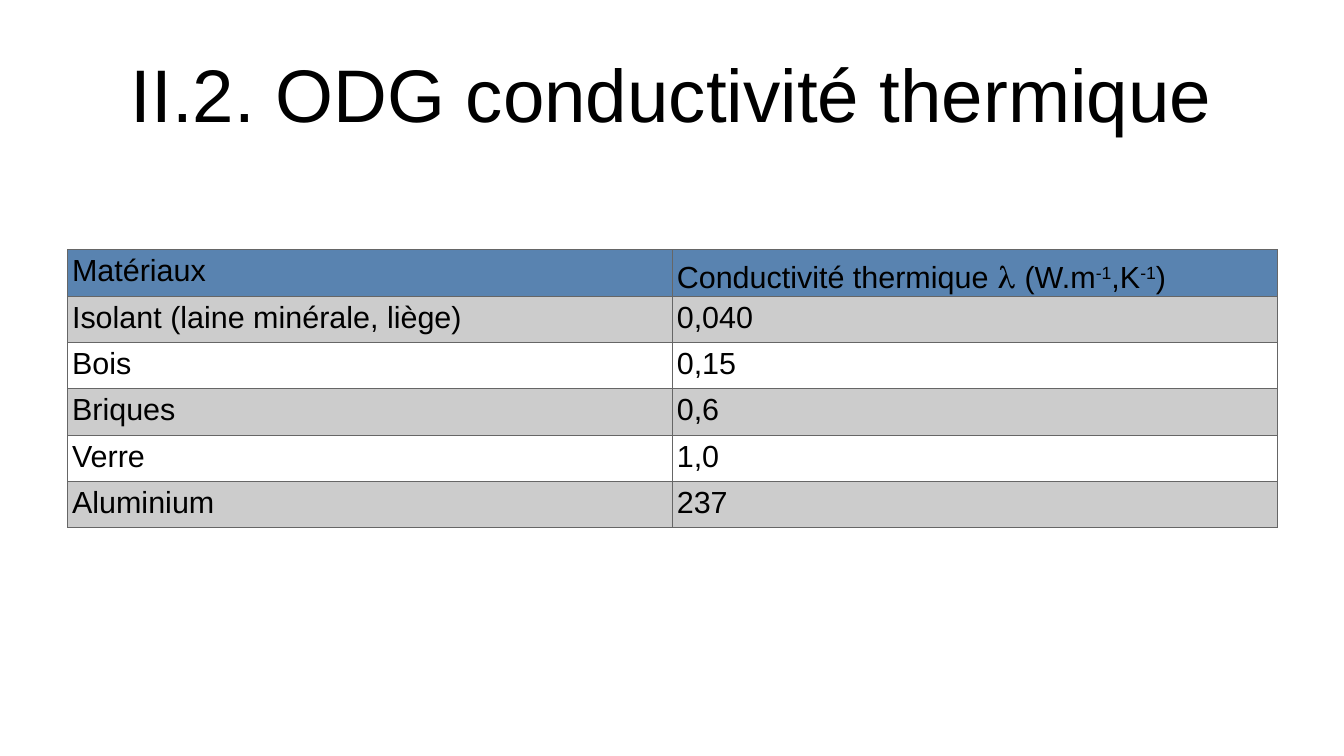
import pptx
import pptx.dml.color
import pptx.enum.text
import pptx.oxml
import pptx.oxml.ns
import pptx.util

SLIDE_WIDTH, SLIDE_HEIGHT = 11.02, 6.2
MARGIN = 0.05 * SLIDE_WIDTH
CONTENT_WIDTH = SLIDE_WIDTH - 2 * MARGIN
ROW_HEIGHT = 0.38
CELL_INSET = 0.04

HEADER_FILL, BAND_FILL, PLAIN_FILL = "5983B0", "CCCCCC", "FFFFFF"
BORDER_COLOR, BORDER_WIDTH = "666666", 0.28

UNIT_HEADER = [
    ("Conductivité thermique ", {}),
    ("λ", {"font": "TeX Gyre Schola"}),
    (" (W.m", {}),
    ("-1", {"superscript": True}),
    (",K", {}),
    ("-1", {"superscript": True}),
    (")", {}),
]
MATERIAL_ROWS = [
    ("Matériaux", UNIT_HEADER),
    ("Isolant (laine minérale, liège)", "0,040"),
    ("Bois", "0,15"),
    ("Briques", "0,6"),
    ("Verre", "1,0"),
    ("Aluminium", "237"),
]


def color(hex_string):
    return pptx.dml.color.RGBColor.from_string(hex_string)


def add_text(paragraph, text, size=18, font="Arial", fill="000000", superscript=False):
    run = paragraph.add_run()
    run.text = text
    run.font.size = pptx.util.Pt(size)
    run.font.name = font
    run.font.color.rgb = color(fill)
    if superscript:
        run._r.get_or_add_rPr().set("baseline", "30000")


def set_insets(target, inset):
    length = pptx.util.Inches(inset)
    target.margin_left = target.margin_right = length
    target.margin_top = target.margin_bottom = length


def set_borders(cell):
    properties = cell._tc.get_or_add_tcPr()
    width = pptx.util.Pt(BORDER_WIDTH)
    for position, side in enumerate(("lnL", "lnR", "lnT", "lnB")):
        line = pptx.oxml.parse_xml(
            f'<a:{side} {pptx.oxml.ns.nsdecls("a")} w="{width}"><a:solidFill>'
            f'<a:srgbClr val="{BORDER_COLOR}"/></a:solidFill></a:{side}>'
        )
        properties.insert(position, line)


def add_title(slide, text, left, top, width, height):
    box = slide.shapes.add_textbox(*map(pptx.util.Inches, (left, top, width, height)))
    frame = box.text_frame
    frame.word_wrap = True
    frame.vertical_anchor = pptx.enum.text.MSO_ANCHOR.MIDDLE
    set_insets(frame, 0)
    paragraph = frame.paragraphs[0]
    paragraph.alignment = pptx.enum.text.PP_ALIGN.CENTER
    add_text(paragraph, text, size=44)


def fill_cell(cell, content, fill):
    cell.fill.solid()
    cell.fill.fore_color.rgb = color(fill)
    set_insets(cell, CELL_INSET)
    set_borders(cell)
    pieces = [(content, {})] if isinstance(content, str) else content
    for text, text_format in pieces:
        add_text(cell.text_frame.paragraphs[0], text, **text_format)


def add_material_table(slide, rows, left, top, width):
    box = (left, top, width, ROW_HEIGHT * len(rows))
    frame = slide.shapes.add_table(len(rows), len(rows[0]), *map(pptx.util.Inches, box))
    table = frame.table
    for row in table.rows:
        row.height = pptx.util.Inches(ROW_HEIGHT)
    for row_index, row_contents in enumerate(rows):
        if row_index == 0:
            fill = HEADER_FILL
        else:
            fill = BAND_FILL if row_index % 2 else PLAIN_FILL
        for column_index, content in enumerate(row_contents):
            fill_cell(table.cell(row_index, column_index), content, fill)


def main():
    presentation = pptx.Presentation()
    presentation.slide_width = pptx.util.Inches(SLIDE_WIDTH)
    presentation.slide_height = pptx.util.Inches(SLIDE_HEIGHT)
    slide = presentation.slides.add_slide(presentation.slide_layouts[6])

    # Title
    add_title(slide, "II.2. ODG conductivité thermique",
              MARGIN, 0.04 * SLIDE_HEIGHT, CONTENT_WIDTH, 0.166 * SLIDE_HEIGHT)

    # Conductivity by material
    add_material_table(slide, MATERIAL_ROWS, MARGIN, 0.33 * SLIDE_HEIGHT, CONTENT_WIDTH)

    presentation.save("out.pptx")


if __name__ == "__main__":
    main()
